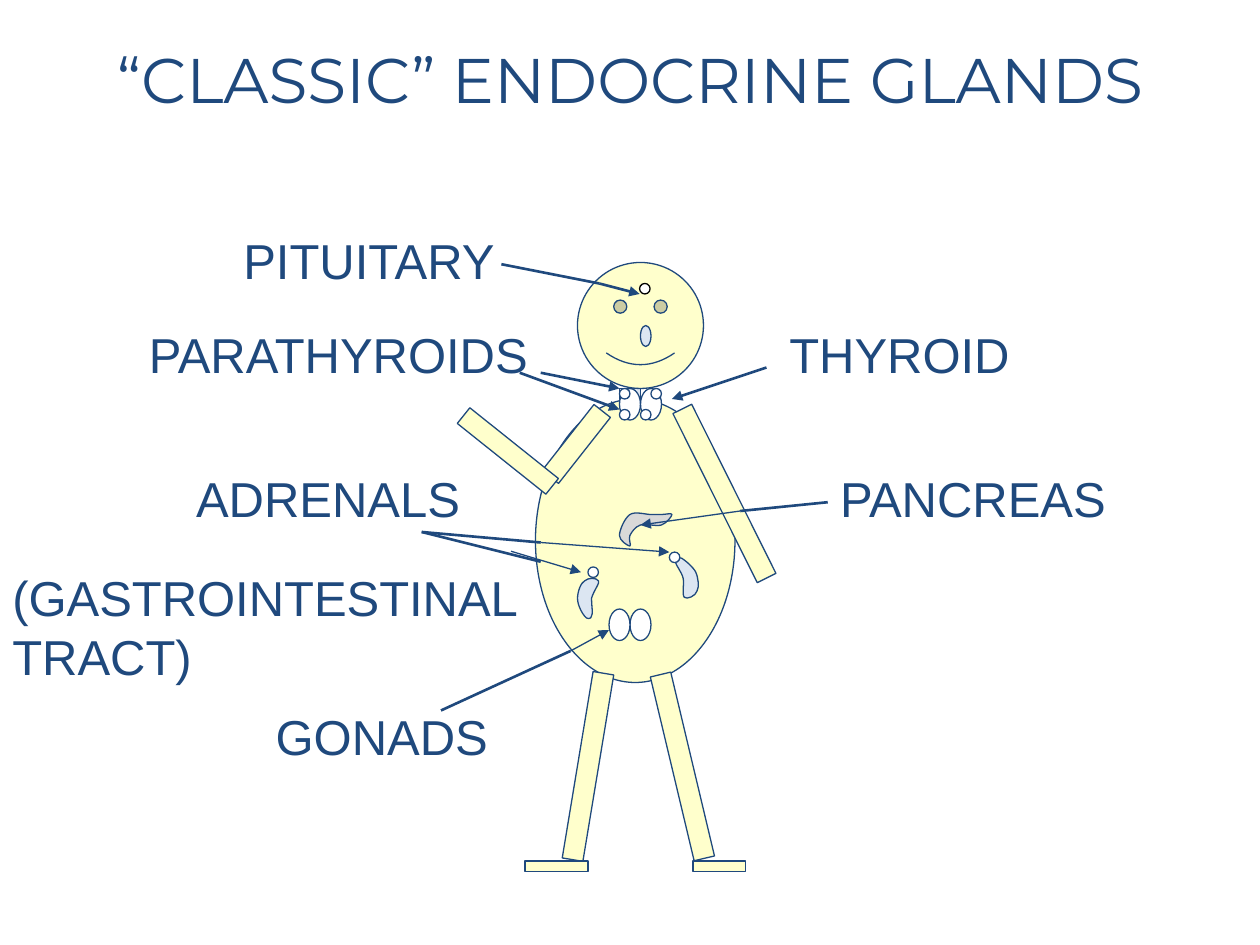
import math
from dataclasses import dataclass

from lxml import etree
from pptx import Presentation
from pptx import util as u
from pptx.dml.color import RGBColor
from pptx.enum import shapes, text
from pptx.oxml import ns


@dataclass(frozen=True)
class Theme:
    navy: str = "1F497D"
    black: str = "000000"
    white: str = "FFFFFF"
    skin: str = "FFFFCC"
    organ: str = "DCE6F2"
    pancreas: str = "D9D9D9"
    title_font: str = "Montserrat"
    label_font: str = "Arial"
    title_size: int = 36
    label_size: int = 28
    thin: float = 0.75
    thick: float = 1.5


THEME = Theme()
OVAL = shapes.MSO_SHAPE.OVAL
BAR = shapes.MSO_SHAPE.RECTANGLE
UNITS_PER_POINT = 100

# Closed outlines: a start point, then cubic segments (two controls, one end).
LEFT_KIDNEY = (338, 342), [
    (339, 338, 343, 333, 342, 332), (341, 330, 336, 330, 334, 332),
    (332, 333, 330, 338, 330, 342), (330, 346, 333, 351, 334, 352),
    (335, 354, 338, 354, 338, 352), (339, 351, 338, 346, 338, 342)]
RIGHT_KIDNEY = (391, 330.5), [
    (391.7, 333.4, 390.2, 339.8, 391.7, 341.3),
    (393.1, 342.7, 398.2, 340.6, 398.9, 337.7),
    (400.3, 335.5, 399.6, 329.8, 398.2, 326.9),
    (396.7, 324, 392.4, 320.4, 390.2, 319),
    (388.1, 318.2, 386.6, 319, 386.6, 321.1),
    (386.6, 322.6, 390.2, 326.9, 391, 330.5)]
PANCREAS = (378, 294), [
    (376, 294, 375, 294, 372, 294), (369, 294, 363, 292, 360, 294),
    (357, 296, 354, 303, 354, 306), (354, 309, 359, 312, 360, 312),
    (361, 312, 359, 308, 360, 306), (361, 304, 363, 301, 366, 300),
    (369, 299, 375, 301, 378, 300), (381, 299, 384, 295, 384, 294),
    (384, 293, 380, 294, 378, 294)]


def fill_with(part, color):
    part.fill.solid()
    part.fill.fore_color.rgb = RGBColor.from_string(color)


def paint(part, fill, outline=THEME.navy):
    part.shadow.inherit = False
    fill_with(part, fill)
    part.line.color.rgb = RGBColor.from_string(outline)
    part.line.width = u.Pt(THEME.thin)


def add_part(canvas, kind, box, fill, rotation=0, outline=THEME.navy):
    part = canvas.add_shape(kind, *map(u.Pt, box))
    part.rotation = rotation
    paint(part, fill, outline)
    return part


def add_organ(canvas, outline, fill, rotation=0, center=(0, 0)):
    """Draw a closed curve; its points are given as they lie after rotation."""
    cos, sin = math.cos(math.radians(-rotation)), math.sin(math.radians(-rotation))

    def place(x, y):
        dx, dy = x - center[0], y - center[1]
        return tuple(round(UNITS_PER_POINT * value) for value in (
            center[0] + dx * cos - dy * sin, center[1] + dx * sin + dy * cos))

    start, segments = outline
    curves = [[place(*s[i:i + 2]) for i in (0, 2, 4)] for s in segments]
    anchors = [curve[-1] for curve in curves]
    left, top = (min(axis) for axis in zip(*anchors))
    builder = canvas.build_freeform(*place(*start), scale=u.Pt(1) / UNITS_PER_POINT)
    builder.add_line_segments(anchors, close=True)
    organ = builder.convert_to_shape()
    straight_sides = list(organ._element.iter(ns.qn("a:lnTo")))
    for side, curve in zip(straight_sides, curves):
        bezier = etree.Element(ns.qn("a:cubicBezTo"))
        for x, y in curve:
            etree.SubElement(bezier, ns.qn("a:pt"), x=str(x - left), y=str(y - top))
        side.getparent().replace(side, bezier)
    organ.rotation = rotation
    paint(organ, fill)


def add_pointer(canvas, start, end, width=THEME.thick, arrow=True):
    pointer = canvas.add_connector(
        shapes.MSO_CONNECTOR.STRAIGHT, *map(u.Pt, start + end))
    pointer.line.color.rgb = RGBColor.from_string(THEME.navy)
    pointer.line.width = u.Pt(width)
    if arrow:
        etree.SubElement(pointer.line._get_or_add_ln(), ns.qn("a:tailEnd"), type="triangle")
    etree.SubElement(pointer._element.spPr, ns.qn("a:effectLst"))


def add_bent_pointer(canvas, label_end, bend, gland_end):
    """Thick outside the body, thin and arrowed towards the gland."""
    add_pointer(canvas, bend, gland_end, THEME.thin)
    add_pointer(canvas, bend, label_end, arrow=False)


def style_text(frame, font, size):
    for paragraph in frame.paragraphs:
        for run in paragraph.runs:
            run.font.name = font
            run.font.size = u.Pt(size)
            run.font.color.rgb = RGBColor.from_string(THEME.navy)


def add_label(canvas, wording, left, top, width, height=41, filled=False):
    label = canvas.add_textbox(*map(u.Pt, (left, top, width, height)))
    if filled:
        fill_with(label, THEME.white)
    frame = label.text_frame
    frame.text = wording
    frame.word_wrap = False
    frame.auto_size = text.MSO_AUTO_SIZE.SHAPE_TO_FIT_TEXT
    style_text(frame, THEME.label_font, THEME.label_size)


def add_title(canvas, wording):
    title = canvas.add_textbox(0, 0, u.Pt(720), u.Pt(90))
    fill_with(title, THEME.white)
    frame = title.text_frame
    frame.text = wording
    frame.word_wrap = True
    frame.vertical_anchor = text.MSO_ANCHOR.MIDDLE
    frame.paragraphs[0].alignment = text.PP_ALIGN.CENTER
    style_text(frame, THEME.title_font, THEME.title_size)


def add_body(canvas):
    add_part(canvas, OVAL, (306, 228, 114, 162), THEME.skin)
    add_part(canvas, BAR, (354, 222, 12, 6), THEME.organ)
    limbs = [
        ((384, 384, 12, 108), 346.6), ((330, 384, 12, 108), 9.4),  # legs
        ((396, 492, 30, 6), 0), ((300, 492, 36, 6), 0),  # feet
        ((408, 228, 12, 108), 333.5), ((323.3, 229.7, 12, 48), 38.2),  # arms
        ((257.8, 252, 64.8, 11.5), 38.6)]  # raised forearm
    for box, rotation in limbs:
        add_part(canvas, BAR, box, THEME.skin, rotation)
    add_organ(canvas, LEFT_KIDNEY, THEME.organ)
    add_organ(canvas, RIGHT_KIDNEY, THEME.organ, 155.1, (392.4, 329.4))


def add_head(canvas):
    face = add_part(canvas, shapes.MSO_SHAPE.SMILEY_FACE, (330, 150, 72, 72), THEME.skin)
    face.adjustments[0] = 0.0465


def add_glands(canvas, places, width, height, outline=THEME.navy):
    for left, top in places:
        add_part(canvas, OVAL, (left, top, width, height), THEME.white, outline=outline)


def main():
    deck = Presentation()
    deck.slide_width, deck.slide_height = u.Pt(720), u.Pt(540)
    canvas = deck.slides.add_slide(deck.slide_layouts[6]).shapes

    def new_group():
        return canvas.add_group_shape().shapes

    add_body(canvas)

    thyroid = new_group()
    add_glands(thyroid, [(354, 222), (366, 222)], 12, 18)
    add_label(thyroid, "THYROID", 444, 182, 140)
    add_pointer(thyroid, (438, 210), (384, 228))

    add_head(canvas)
    add_title(canvas, "“CLASSIC” ENDOCRINE GLANDS")

    parathyroids = new_group()
    add_glands(parathyroids, [(372, 222), (354, 222), (354, 234), (366, 234)], 6, 6)
    add_pointer(parathyroids, (309, 213), (354, 222))
    add_pointer(parathyroids, (297, 213), (354, 234))
    add_label(parathyroids, "PARATHYROIDS", 78, 182, 235)

    add_part(canvas, OVAL, (366, 186, 6, 12), THEME.organ)  # nose
    add_label(canvas, "(GASTROINTESTINAL\nTRACT)", 0, 321, 304, 74, filled=True)

    gonads = new_group()
    add_glands(gonads, [(360, 348), (348, 348)], 12, 18)
    add_label(gonads, "GONADS", 150.5, 400, 136)
    add_bent_pointer(gonads, (252, 406), (326, 372), (348, 360))

    adrenals = new_group()
    add_glands(adrenals, [(336, 324), (382.5, 315.5)], 6, 6)
    add_label(adrenals, "ADRENALS", 105, 264, 166)
    add_pointer(adrenals, (292, 315), (332, 327), THEME.thin)
    add_bent_pointer(adrenals, (241, 304), (309, 310), (382.5, 315.5))
    add_pointer(adrenals, (309, 321), (241, 304), arrow=False)

    pituitary = new_group()
    add_glands(pituitary, [(365.5, 162)], 6, 6, THEME.black)
    add_label(pituitary, "PITUITARY", 132, 128, 161, filled=True)
    add_pointer(pituitary, (342.5, 162), (365.5, 168))
    add_pointer(pituitary, (342.5, 162), (286.5, 151), arrow=False)

    pancreas = new_group()
    add_organ(pancreas, PANCREAS, THEME.pancreas)
    add_label(pancreas, "PANCREAS", 473, 264, 168)
    add_bent_pointer(pancreas, (473, 287), (423, 292), (366, 300))

    deck.save("out.pptx")


if __name__ == "__main__":
    main()
